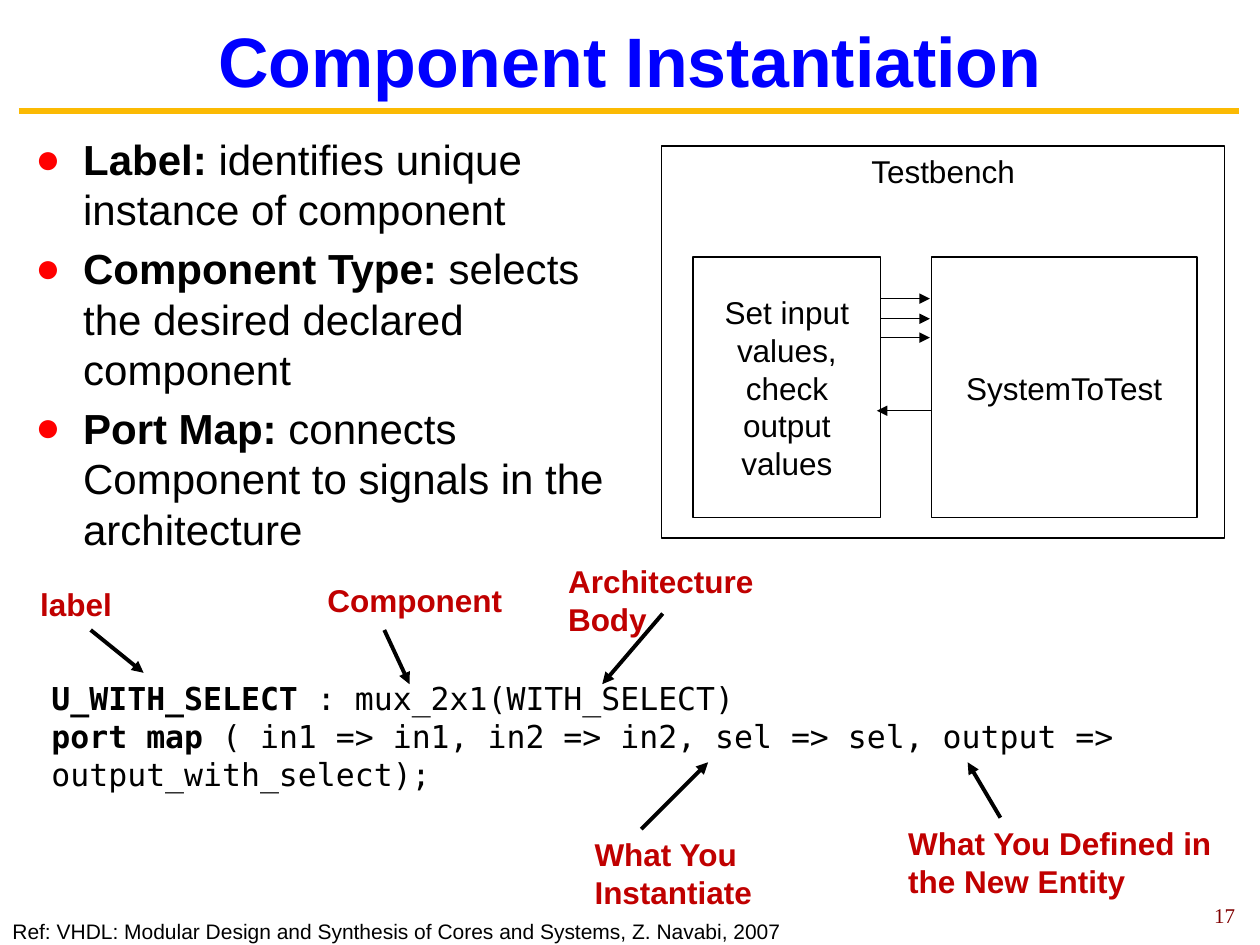
from lxml import etree
from pptx import Presentation
from pptx.dml.color import RGBColor
from pptx.enum.shapes import MSO_CONNECTOR, MSO_SHAPE
from pptx.enum.text import MSO_ANCHOR, MSO_AUTO_SIZE, PP_ALIGN
from pptx.oxml.ns import qn
from pptx.util import Inches, Pt

STRAIGHT = MSO_CONNECTOR.STRAIGHT
RECTANGLE = MSO_SHAPE.RECTANGLE
TOP, MIDDLE = MSO_ANCHOR.TOP, MSO_ANCHOR.MIDDLE
LEFT, CENTER = PP_ALIGN.LEFT, PP_ALIGN.CENTER
FIXED, GROW = MSO_AUTO_SIZE.NONE, MSO_AUTO_SIZE.SHAPE_TO_FIT_TEXT

BLACK, BLUE, RED, DARK_RED = "000000", "0000FF", "FF0000", "C00000"
GOLD, MAROON = "FBBA03", "800000"
CODE_FONT = "DejaVu Sans Mono"


def color(value):
    return RGBColor.from_string(value)


def add_element(parent, tag, **attributes):
    return etree.SubElement(parent, qn(tag), attributes)


class SlideBuilder:
    def __init__(self, slide):
        self.slide = slide
        self.text_style = {"name": "Arial", "size": Pt(18), "bold": False}

    def fill_text(self, shape, paragraphs, text_color=BLACK, align=LEFT, frame=None, **font):
        text_frame = shape.text_frame
        frame_values = {"word_wrap": True, "auto_size": FIXED, "vertical_anchor": TOP}
        for name, value in (frame_values | (frame or {})).items():
            setattr(text_frame, name, value)
        for index, runs in enumerate(paragraphs):
            paragraph = text_frame.paragraphs[0] if index == 0 else text_frame.add_paragraph()
            paragraph.alignment = align
            for text, bold in runs:
                run = paragraph.add_run()
                run.text = text
                for name, value in (self.text_style | font | {"bold": bold}).items():
                    setattr(run.font, name, value)
                run.font.color.rgb = color(text_color)

    def place(self, shape, box):
        for name, value in zip(("left", "top", "width", "height"), box):
            setattr(shape, name, Inches(value))

    def title(self, text, box):
        shape = self.slide.shapes.title
        self.place(shape, box)
        self.fill_text(shape, [[(text, True)]], BLUE, CENTER,
                       {"vertical_anchor": MIDDLE}, size=Pt(40))

    def bullets(self, items, box):
        shape = self.slide.placeholders[1]
        self.place(shape, box)
        paragraphs = [[(term, True), (meaning, False)] for term, meaning in items]
        self.fill_text(shape, paragraphs, size=Pt(24))
        for paragraph in shape.text_frame.paragraphs:
            properties = paragraph._p.get_or_add_pPr()
            properties.set("marL", str(Inches(0.38)))
            properties.set("indent", str(-Inches(0.38)))
            bullet_color = add_element(properties, "a:buClr")
            add_element(bullet_color, "a:srgbClr", val=RED)
            add_element(properties, "a:buFont", typeface="Arial")
            add_element(properties, "a:buChar", char="●")

    def text(self, paragraphs, box, text_color=BLACK, align=LEFT, frame=None, **font):
        shape = self.slide.shapes.add_textbox(*map(Inches, box))
        self.fill_text(shape, paragraphs, text_color, align,
                       {"auto_size": GROW} | (frame or {}), **font)

    def block(self, text, box, **frame):
        shape = self.slide.shapes.add_shape(RECTANGLE, *map(Inches, box))
        shape.shadow.inherit = False
        shape.fill.background()
        shape.line.color.rgb = color(BLACK)
        shape.line.width = Pt(0.75)
        self.fill_text(shape, [[(text, False)]], align=CENTER, frame=frame)

    def line(self, start, end, line_color=BLACK, width=0.75, arrow=True):
        connector = self.slide.shapes.add_connector(STRAIGHT, *map(Inches, start + end))
        connector.line.color.rgb = color(line_color)
        connector.line.width = Pt(width)
        if arrow:
            add_element(connector.line._get_or_add_ln(), "a:tailEnd", type="triangle")
        add_element(connector._element.spPr, "a:effectLst")

    def callout(self, text, box, start, end):
        self.text([[(text, True)]], box, DARK_RED)
        self.line(start, end, width=2.25)


def main():
    presentation = Presentation()
    presentation.slide_width, presentation.slide_height = Inches(10), Inches(7.5)
    builder = SlideBuilder(presentation.slides.add_slide(presentation.slide_layouts[1]))

    builder.line((0.15, 0.88), (9.83, 0.88), GOLD, 3.75, arrow=False)
    builder.title("Component Instantiation", (0.19, 0.14, 9.62, 0.67))
    builder.bullets([
        ("Label: ", "identifies unique instance of component"),
        ("Component Type: ", "selects the desired declared component"),
        ("Port Map: ", "connects Component to signals in the architecture"),
    ], (0.18, 1.01, 5.06, 2.6))
    builder.text([[("17", False)]], (9.59, 7.15, 0.26, 0.23), MAROON, CENTER,
                 {"word_wrap": False, "auto_size": FIXED, "vertical_anchor": MIDDLE},
                 name="Times New Roman", size=Pt(12))

    builder.text([
        [("U_WITH_SELECT ", True), (": mux_2x1(WITH_SELECT)", False)],
        [("port map ", True),
         ("( in1 => in1, in2 => in2, sel => sel, output => output_with_select);", False)],
    ], (0.31, 5.34, 9.42, 0.71), name=CODE_FONT)

    callouts = [
        ("label", (0.22, 4.59, 1, 0.4), (0.72, 5), (1.14, 5.34)),
        ("Component", (2.5, 4.56, 1.89, 0.4), (3.05, 5), (3.25, 5.43)),
        ("Architecture Body", (4.41, 4.41, 1.89, 0.71), (5.26, 4.87), (4.78, 5.43)),
        ("What You Instantiate", (4.62, 6.58, 2.19, 0.71), (5.09, 6.58), (5.62, 6.05)),
        ("What You Defined in the New Entity", (7.11, 6.49, 2.62, 0.71),
         (7.94, 6.49), (7.68, 6.05)),
    ]
    for callout in callouts:
        builder.callout(*callout)

    builder.block("SystemToTest", (7.39, 2.04, 2.11, 2.07),
                  word_wrap=False, vertical_anchor=MIDDLE)
    builder.block("Testbench", (5.25, 1.16, 4.47, 3.11), word_wrap=False)
    builder.block("Set input values, check output values", (5.5, 2.04, 1.49, 2.07),
                  vertical_anchor=MIDDLE)
    for y in (2.37, 2.53, 2.68):
        builder.line((6.99, y), (7.38, y))
    builder.line((7.39, 3.26), (6.96, 3.26))

    reference = "Ref: VHDL: Modular Design and Synthesis of Cores and Systems, Z. Navabi, 2007"
    builder.text([[(reference, False)]], (0, 7.24, 9.78, 0.61), size=Pt(12))

    presentation.save("out.pptx")


if __name__ == "__main__":
    main()
